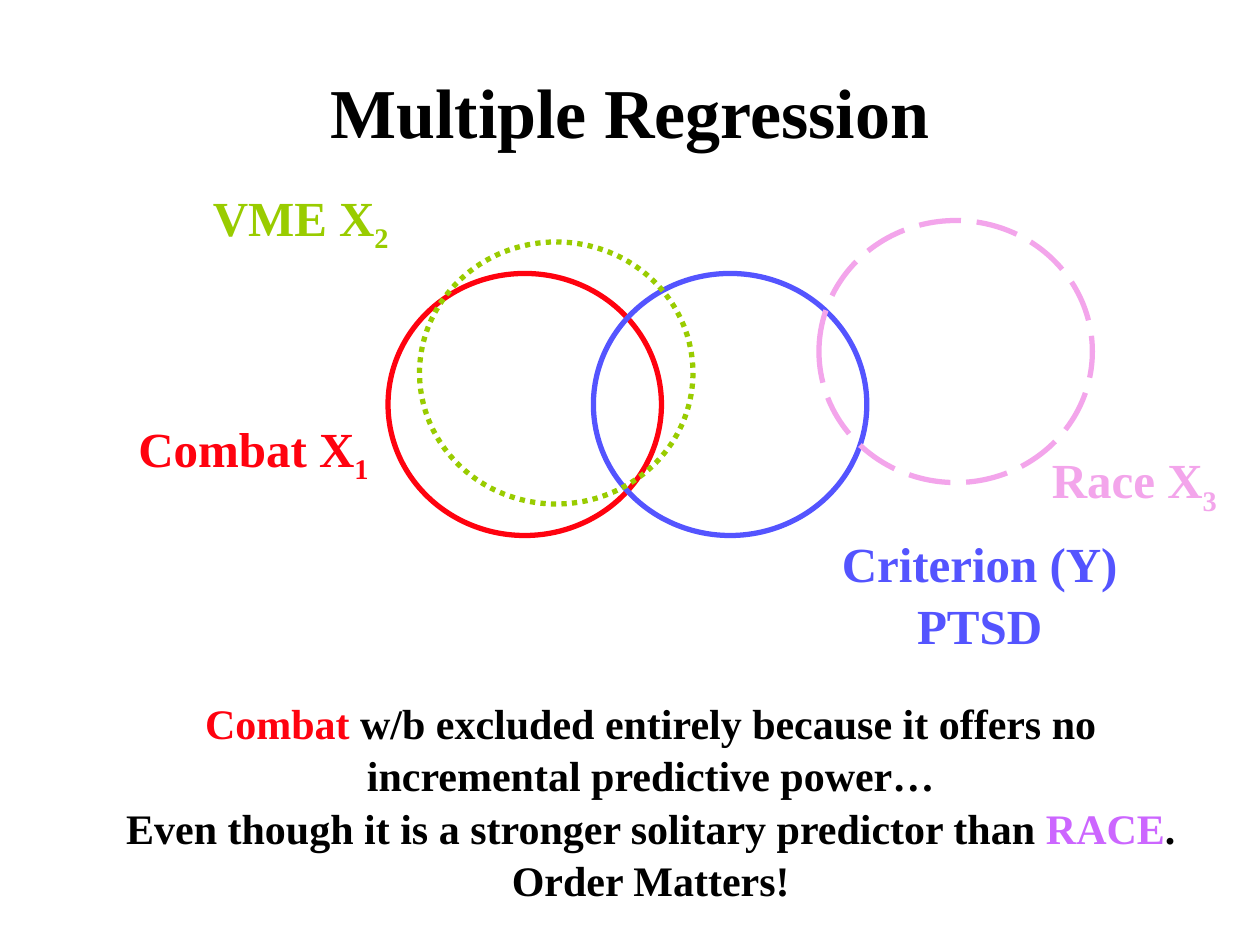
from pptx import Presentation
from pptx.dml.color import RGBColor
from pptx.enum.dml import MSO_LINE as Dash
from pptx.enum.shapes import MSO_SHAPE as Shape
from pptx.enum.text import MSO_ANCHOR as Anchor, PP_ALIGN as Align
from pptx.util import Inches, Pt

RED, BLUE, GREEN, PINK = "FF020F", "5454FF", "99CC00", "F3A5EB"
BLACK, VIOLET = "000000", "CC66FF"


def paint(form, hue):
    form.rgb = RGBColor.from_string(hue)


def write(box, size, lines, align, space=1.04):
    frame = slide.shapes.add_textbox(*map(Inches, box)).text_frame
    frame.word_wrap = False
    for i, line in enumerate(lines):
        para = frame.paragraphs[0] if i == 0 else frame.add_paragraph()
        para.alignment = align
        para.line_spacing = space
        for text, hue, *base in line:
            run = para.add_run()
            run.text = text
            look = {"name": "Times New Roman", "size": Pt(size), "bold": True}
            for key, val in look.items():
                setattr(run.font, key, val)
            paint(run.font.color, hue)
            if base:
                run._r.get_or_add_rPr().set("baseline", str(base[0]))
    return frame


deck = Presentation()
deck.slide_width, deck.slide_height = Inches(10), Inches(7.5)
slide = deck.slides.add_slide(deck.slide_layouts[6])

title = write((0.75, 0.25, 8.5, 1.25), 40,
              [[("Multiple Regression", BLACK)]], Align.CENTER, 1.0)
title.vertical_anchor = Anchor.MIDDLE

rings = [
    (3.08, 2.17, RED, Dash.SOLID),
    (4.71, 2.17, BLUE, Dash.SOLID),
    (3.33, 1.92, GREEN, Dash.ROUND_DOT),
    (6.5, 1.75, PINK, Dash.LONG_DASH),
]
for left, top, hue, dash in rings:
    ring = slide.shapes.add_shape(
        Shape.OVAL, Inches(left), Inches(top), Inches(2.17), Inches(2.08))
    ring.shadow.inherit = False
    ring.fill.background()
    paint(ring.line.color, hue)
    for key, val in {"width": Pt(3), "dash_style": dash}.items():
        setattr(ring.line, key, val)

names = [
    (1, 3.25, 2.05, "Combat X", "1", RED),
    (1.59, 1.42, 1.62, "VME X", "2", GREEN),
    (8.25, 3.5, 1.53, "Race X", "3", PINK),
]
for left, top, width, name, sub, hue in names:
    write((left, top, width, 0.57), 28,
          [[(name, hue), (sub, hue, -25000)]], Align.LEFT)

write((6.58, 4.17, 2.39, 1.03), 28,
      [[("Criterion (Y)", BLUE)], [("PTSD", BLUE)]], Align.CENTER)

write((0.89, 5.47, 8.55, 1.7), 24, [
    [("Combat", RED), (" w/b excluded entirely because it offers no", BLACK)],
    [("incremental predictive power…", BLACK)],
    [("Even though it is a stronger solitary predictor than ", BLACK),
     ("RACE", VIOLET), (".", BLACK)],
    [("Order Matters!", BLACK)],
], Align.CENTER)

deck.save("out.pptx")
